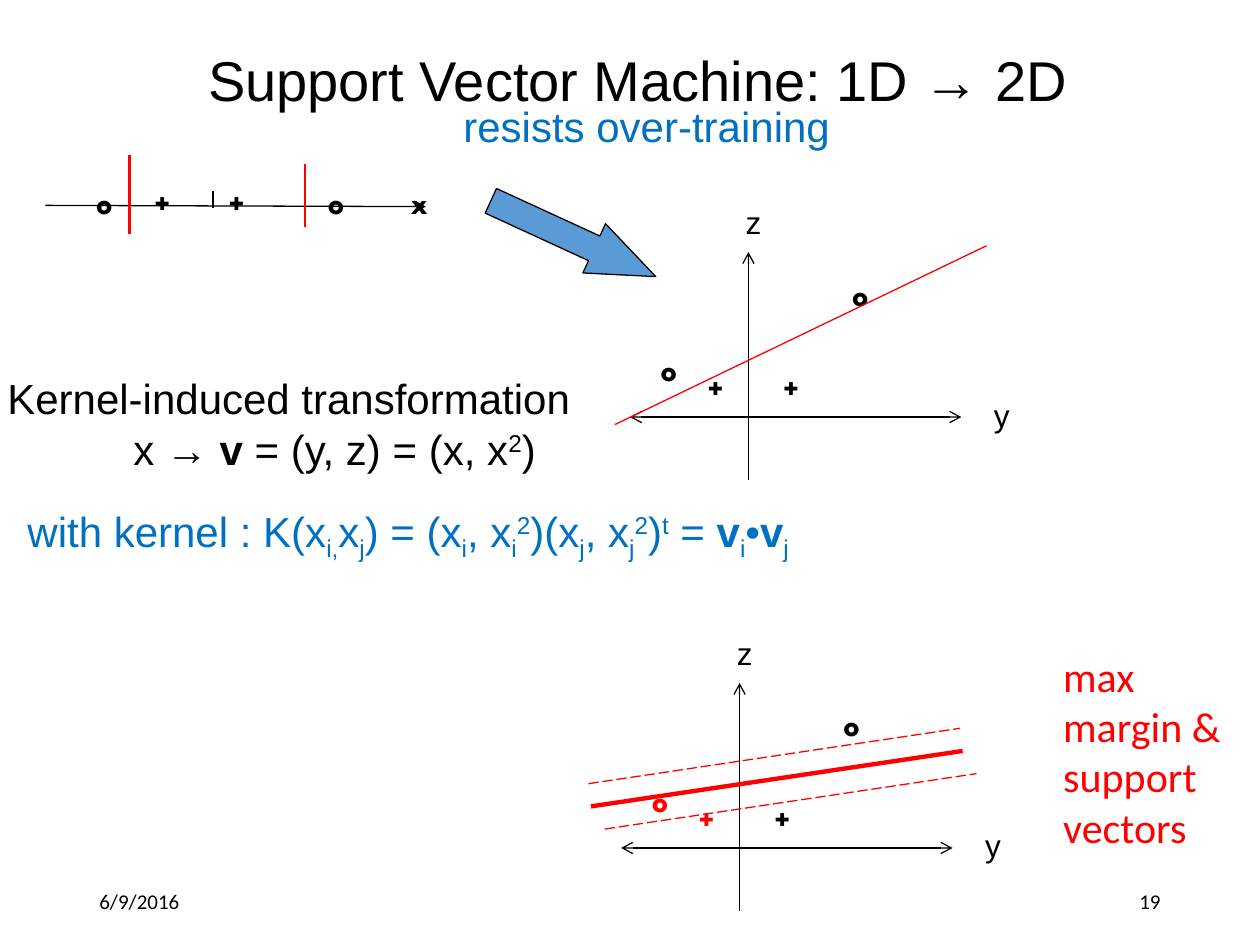
"""Build a slide on lifting one-dimensional data to 2D for a support vector machine."""
from pptx import Presentation
from pptx.dml.color import RGBColor
from pptx.enum.dml import MSO_LINE
from pptx.enum.shapes import MSO_CONNECTOR, MSO_SHAPE
from pptx.enum.text import MSO_ANCHOR, MSO_AUTO_SIZE, PP_ALIGN
from pptx.oxml.ns import qn
from pptx.util import Inches, Pt
from lxml.etree import SubElement

COLORS = {"ink": "000000", "red": "FF0000", "blue": "0070C0", "arrow": "5B9BD5"}
BASELINES = {"_": "-25000", "^": "30000"}


class Deck:
    """Hold the style and current slide, measured on a grid of 100 columns by 75 rows."""

    def __init__(self):
        self.prs = Presentation()
        self.prs.slide_width, self.prs.slide_height = Inches(10), Inches(7.5)
        self.cell = self.prs.slide_width / 100
        self.slide = self.prs.slides.add_slide(self.prs.slide_layouts[5])

    def grid(self, *cells):
        """Turn grid cells into lengths."""
        return [round(c * self.cell) for c in cells]

    def color(self, name):
        """Look up a colour."""
        return RGBColor.from_string(COLORS[name])

    def fill_text(self, sp, paragraphs, size, color="ink", font="Arial", bold=False,
                  align=PP_ALIGN.LEFT, anchor=MSO_ANCHOR.TOP, wrap=False, indents=()):
        """Fill a shape with paragraphs of (text, marks) runs."""
        tf = sp.text_frame
        tf.auto_size, tf.word_wrap = MSO_AUTO_SIZE.NONE, wrap
        tf.vertical_anchor = anchor
        for i, runs in enumerate(paragraphs):
            p = tf.add_paragraph() if i else tf.paragraphs[0]
            p.alignment = align
            if i < len(indents):
                p._p.get_or_add_pPr().set("marL", str(self.grid(indents[i])[0]))
            for text, marks in [(runs, "")] if isinstance(runs, str) else runs:
                r = p.add_run()
                r.text = text
                r.font.size, r.font.name = Pt(size), font
                r.font.bold = bold or "b" in marks
                r.font.color.rgb = self.color(color)
                if marks in BASELINES:
                    r._r.get_or_add_rPr().set("baseline", BASELINES[marks])

    def title(self, text, box, size):
        """Place the title placeholder."""
        sp = self.slide.shapes.title
        sp.left, sp.top, sp.width, sp.height = self.grid(*box)
        self.fill_text(sp, [text], size, align=PP_ALIGN.CENTER)

    def text(self, paragraphs, box, size, **style):
        """Add a text box."""
        sp = self.slide.shapes.add_textbox(*self.grid(*box))
        self.fill_text(sp, paragraphs, size, **style)

    def mark(self, symbol, x, y, color="ink"):
        """Add a data point centred on column x."""
        self.text([symbol], (x - 2, y, 4, 4), 18, color=color,
                  font="League Spartan", bold=True, align=PP_ALIGN.CENTER)

    def line(self, start, end, color="ink", width=0.75, dash=None, ends=()):
        """Add a line with optional arrowheads."""
        sp = self.slide.shapes.add_connector(
            MSO_CONNECTOR.STRAIGHT, *self.grid(*start, *end))
        sp.line.color.rgb, sp.line.width = self.color(color), Pt(width)
        if dash:
            sp.line.dash_style = dash
        for end_name in ends:
            SubElement(sp._element.spPr.get_or_add_ln(), qn(f"a:{end_name}")).set("type", "arrow")
        SubElement(sp._element.spPr, qn("a:effectLst"))

    def arrow(self, box, rotation):
        """Add a block arrow."""
        sp = self.slide.shapes.add_shape(MSO_SHAPE.RIGHT_ARROW, *self.grid(*box))
        sp.adjustments[0], sp.adjustments[1] = 0.5, 1.25
        sp.rotation = rotation
        sp.shadow.inherit = False
        sp.fill.solid()
        sp.fill.fore_color.rgb = self.color("arrow")
        sp.line.color.rgb, sp.line.width = self.color("ink"), Pt(0.75)

    def plot(self, x, y, support="ink"):
        """Add z and y axes, z arrowhead at (x, y), with the four lifted points."""
        self.line((x, y), (x, y + 18.1), ends=["headEnd"])
        self.line((x - 9.4, y + 13.1), (x + 16.9, y + 13.1), ends=["headEnd", "tailEnd"])
        self.text(["z"], (x - 1.2, y - 4.4, 4, 4), 18)
        self.text(["y"], (x + 18.5, y + 10.9, 3.3, 4), 18)
        self.mark("o", x - 6.3, y + 7.3, support)
        self.mark("+", x - 2.6, y + 8.7, support)
        self.mark("+", x + 3.4, y + 8.7)
        self.mark("o", x + 8.9, y + 1.3)


def main():
    """Compose and save the slide."""
    deck = Deck()
    deck.title("Support Vector Machine: 1D → 2D", (15.3, 3.1, 70.7, 6.4), 32)
    deck.text(["resists over-training"], (35.8, 7.5, 31.4, 5), 24, color="blue")

    deck.line((3.6, 16.3), (33.8, 16.4), ends=["tailEnd"])
    deck.line((16.9, 15.2), (16.9, 16.5))
    for symbol, x in zip("o++ox", (8.3, 12.9, 18.8, 26.7, 33.3)):
        deck.mark(symbol, x, 14)
    deck.line((10.3, 12.3), (10.3, 18.6), "red", 1.5)
    deck.line((24.2, 13), (24.2, 18), "red", 1.5)
    deck.arrow((38.3, 16.8, 14.4, 4.3), 24.7)

    deck.plot(59.4, 20)
    deck.line((48.8, 33.7), (78.3, 19.5), "red")

    deck.text(["Kernel-induced transformation",
               [("x → ", ""), ("v ", "b"), ("= (y, z) = (x, x", ""), ("2", "^"), (")", "")]],
              (-0.4, 29.1, 47.1, 9.1), 24, indents=(0, 10))
    deck.text([[("with kernel : K(x", ""), ("i,", "_"), ("x", ""), ("j", "_"),
                (") = (x", ""), ("i", "_"), (", x", ""), ("i", "_"), ("2", "^"),
                (")(x", ""), ("j", "_"), (", x", ""), ("j", "_"), ("2", "^"),
                (")", ""), ("t", "^"), (" = ", ""), ("v", "b"), ("i", "_"),
                ("•", ""), ("v", "b"), ("j", "_")]],
              (1.2, 39.6, 66, 7.7), 24, color="blue", wrap=True)

    deck.plot(58.7, 54.2, support="red")
    deck.line((46.9, 64), (76.4, 59.6), "red", 2.5)
    for x, y in ((46.7, 62.2), (48, 65.8)):
        deck.line((x, y), (x + 29.5, y - 4.4), "red", dash=MSO_LINE.LONG_DASH)
    deck.text(["max", "margin &", "support", "vectors"], (83.4, 51.1, 14.6, 20.2), 24,
              color="red", font="Calibri")

    for text, x, align in (("6/9/2016", 6.9, PP_ALIGN.LEFT), ("19", 70.6, PP_ALIGN.RIGHT)):
        deck.text([text], (x, 69.5, 22.5, 4), 12, font="Calibri", align=align,
                  anchor=MSO_ANCHOR.MIDDLE, wrap=True)
    deck.prs.save("out.pptx")


if __name__ == "__main__":
    main()
